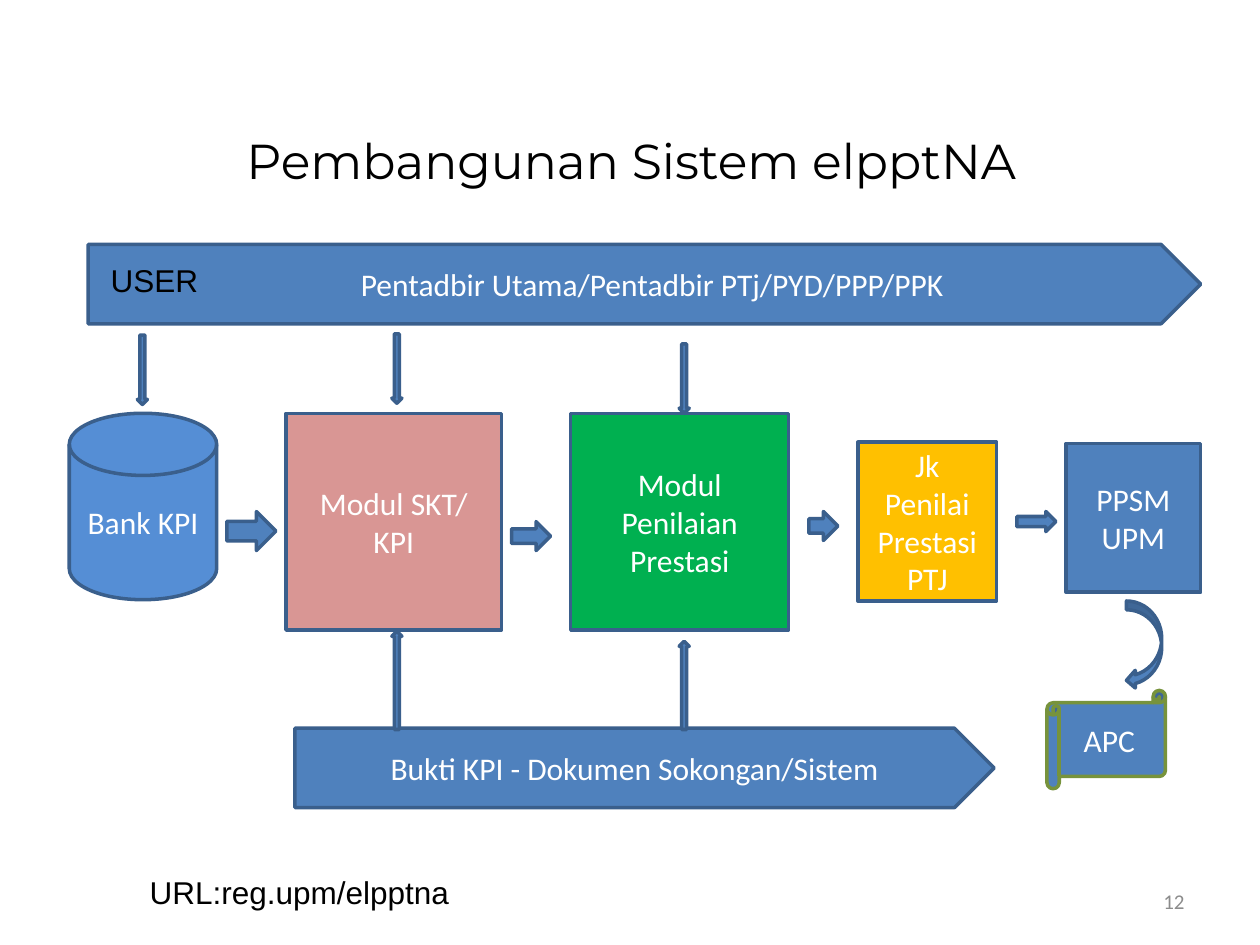
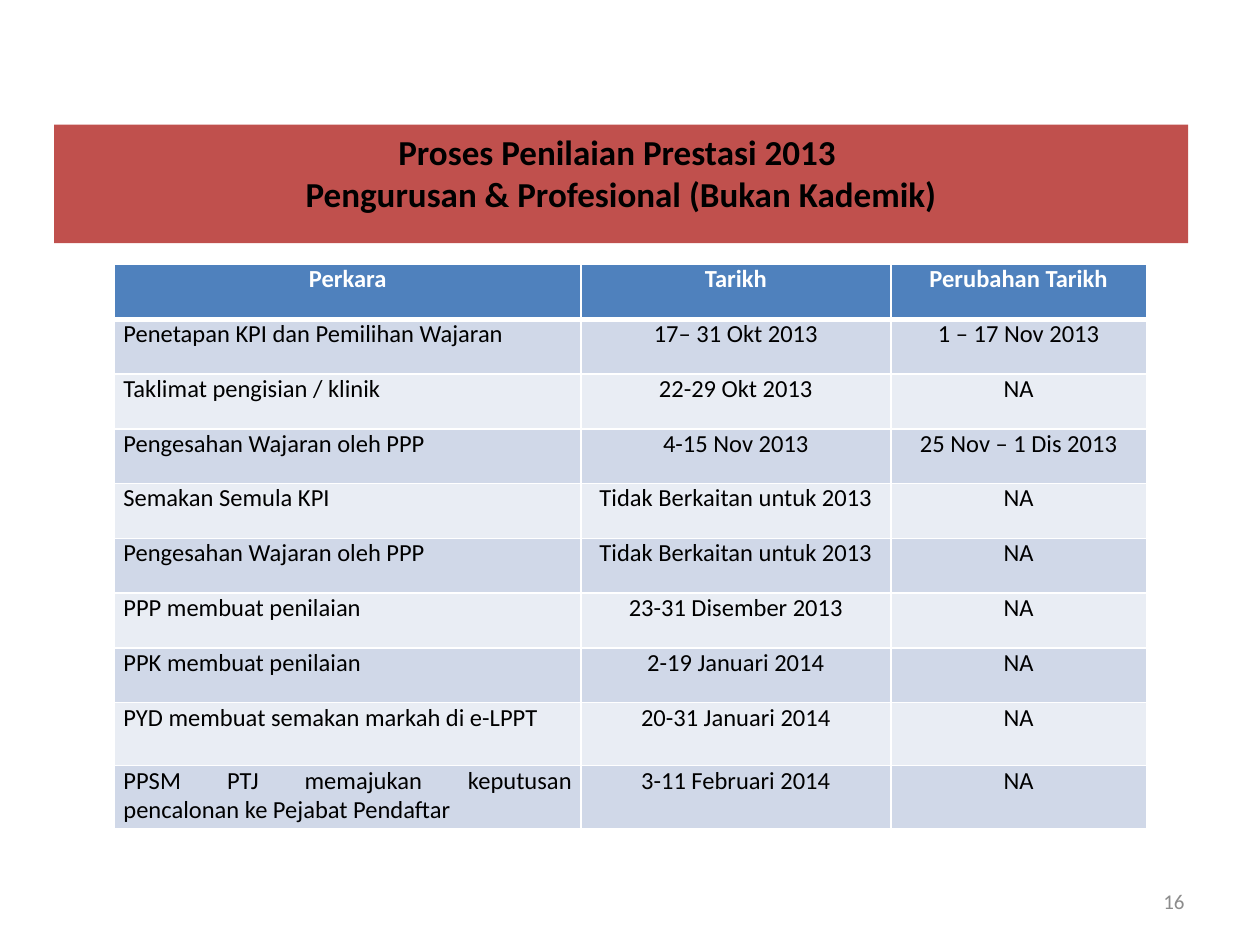
from lxml import etree
from pptx import Presentation
from pptx import util as u
from pptx.dml.color import RGBColor
from pptx.enum import shapes, text
from pptx.oxml import ns

# Shared look
WHITE, BLACK = RGBColor(255, 255, 255), RGBColor(0, 0, 0)
GREY = RGBColor(0x8C, 0x8C, 0x8C)
BLUE, DARK_BLUE = RGBColor(0x4F, 0x81, 0xBD), RGBColor(0x3A, 0x5F, 0x8C)
SKY, PINK = RGBColor(0x55, 0x8E, 0xD5), RGBColor(0xD9, 0x96, 0x94)
GREEN, AMBER = RGBColor(0x00, 0xB0, 0x50), RGBColor(0xFF, 0xC0, 0x00)
OLIVE, RED = RGBColor(0x77, 0x93, 0x3C), RGBColor(0xC0, 0x50, 0x4D)
BAND_DARK, BAND_LIGHT = RGBColor(0xD0, 0xD8, 0xE8), RGBColor(0xE9, 0xED, 0xF4)

KIND = shapes.MSO_SHAPE
LEFT, CENTER = text.PP_ALIGN.LEFT, text.PP_ALIGN.CENTER
RIGHT, JUSTIFY = text.PP_ALIGN.RIGHT, text.PP_ALIGN.JUSTIFY
TOP, MIDDLE = text.MSO_ANCHOR.TOP, text.MSO_ANCHOR.MIDDLE
TITLE_TOP, TITLE_WIDTH = 0.99, 9

# Slide 1 content: kind, label, fill, outline, (left, top, width, height)
STAGES = [
    (KIND.FLOWCHART_MAGNETIC_DISK, "Bank KPI", SKY, DARK_BLUE, (0.55, 3.28, 1.17, 1.48)),
    (KIND.RECTANGLE, "Modul SKT/ KPI", PINK, DARK_BLUE, (2.27, 3.28, 1.71, 1.72)),
    (KIND.RECTANGLE, "Modul Penilaian Prestasi", GREEN, DARK_BLUE, (4.53, 3.28, 1.73, 1.72)),
    (KIND.FLOWCHART_PROCESS, "Jk Penilai Prestasi PTJ", AMBER, DARK_BLUE, (6.81, 3.51, 1.1, 1.26)),
    (KIND.FLOWCHART_PROCESS, "PPSM UPM", BLUE, DARK_BLUE, (8.46, 3.52, 1.07, 1.18)),
    (KIND.HORIZONTAL_SCROLL, "APC", BLUE, OLIVE, (8.31, 5.48, 0.94, 0.78)),
]
USERS = ("Pentadbir Utama/Pentadbir PTj/PYD/PPP/PPK", (0.7, 1.94, 8.83, 0.63))
EVIDENCE = ("Bukti KPI - Dokumen Sokongan/Sistem", (2.34, 5.78, 5.55, 0.63))

# Thin vertical arrows: kind, left, top, height
THIN = 0.08
VERTICAL_ARROWS = [
    (KIND.DOWN_ARROW, 1.09, 2.66, 0.55),
    (KIND.DOWN_ARROW, 3.11, 2.65, 0.55),
    (KIND.DOWN_ARROW, 5.39, 2.73, 0.55),
    (KIND.UP_ARROW, 3.11, 5.01, 0.78),
    (KIND.UP_ARROW, 5.39, 5.09, 0.7),
]
STEP_ARROWS = [
    (1.8, 4.06, 0.39, 0.31), (4.06, 4.14, 0.31, 0.23),
    (6.42, 4.06, 0.23, 0.23), (8.07, 4.06, 0.31, 0.16),
]
AWARD_ARROW = (8.94, 4.77, 0.28, 0.7)

# Slide 2 content
SCHEDULE_TITLE = "Proses Penilaian Prestasi 2013 \vPengurusan & Profesional (Bukan Kademik)"
SCHEDULE = [
    ("Perkara", "Tarikh", "Perubahan Tarikh"),
    ("Penetapan KPI dan Pemilihan Wajaran", "17– 31 Okt 2013", "1 – 17 Nov 2013"),
    ("Taklimat pengisian / klinik", "22-29 Okt 2013", "NA"),
    ("Pengesahan Wajaran oleh PPP", "4-15 Nov 2013", "25 Nov – 1 Dis 2013"),
    ("Semakan Semula KPI", "Tidak Berkaitan untuk 2013", "NA"),
    ("Pengesahan Wajaran oleh PPP", "Tidak Berkaitan untuk 2013", "NA"),
    ("PPP membuat penilaian", "23-31 Disember 2013", "NA"),
    ("PPK membuat penilaian", "2-19 Januari 2014", "NA"),
    ("PYD membuat semakan markah di e-LPPT", "20-31 Januari 2014", "NA"),
    ("PPSM PTJ memajukan keputusan pencalonan ke Pejabat Pendaftar",
     "3-11 Februari 2014", "NA"),
]
COLUMN_WIDTHS = [3.7, 2.46, 2.03]
ROW_HEIGHTS = [0.435] * 8 + [0.5] * 2


def inches(box):
    return [u.Inches(length) for length in box]


def write(frame, words, size, color, align, anchor=TOP, font="Calibri", bold=False):
    frame.word_wrap = True
    frame.vertical_anchor = anchor
    paragraph = frame.paragraphs[0]
    paragraph.text = words
    paragraph.alignment = align
    style = paragraph.font
    style.name, style.size, style.bold = font, u.Pt(size), bold
    style.color.rgb = color


def add_text(slide, box, words, size, color, align, **options):
    frame = slide.shapes.add_textbox(*inches(box)).text_frame
    write(frame, words, size, color, align, **options)
    return frame


def add_figure(slide, kind, box, label="", fill=BLUE, outline=DARK_BLUE):
    figure = slide.shapes.add_shape(kind, *inches(box))
    figure.shadow.inherit = False
    figure.fill.solid()
    figure.fill.fore_color.rgb = fill
    if outline is None:
        figure.line.fill.background()
    else:
        figure.line.color.rgb = outline
        figure.line.width = u.Pt(2)
    if label:
        write(figure.text_frame, label, 18, WHITE, CENTER, MIDDLE)
    return figure


def new_slide(deck, number):
    slide = deck.slides.add_slide(deck.slide_layouts[6])
    add_text(slide, (7.17, 6.95, 2.33, 0.4), str(number), 12, GREY, RIGHT, anchor=MIDDLE)
    return slide


def set_borders(cell, top, bottom):
    """White cell edges; widths in points. Edges go before the cell fill."""
    properties = cell._tc.get_or_add_tcPr()
    widths = {"L": 1, "R": 1, "T": top, "B": bottom}
    for place, (side, width) in enumerate(widths.items()):
        edge = etree.Element(ns.qn(f"a:ln{side}"), w=str(u.Pt(width)))
        fill = etree.SubElement(edge, ns.qn("a:solidFill"))
        etree.SubElement(fill, ns.qn("a:srgbClr"), val=str(WHITE))
        properties.insert(place, edge)


def build_system(deck):
    slide = new_slide(deck, 12)
    add_text(slide, (0.51, TITLE_TOP, TITLE_WIDTH, 0.87), "Pembangunan Sistem elpptNA",
             28, BLACK, CENTER, font="Montserrat")

    # Stages and the two long bands
    for kind, label, fill, outline, box in STAGES:
        add_figure(slide, kind, box, label, fill, outline)
    users, evidence = [add_figure(slide, KIND.PENTAGON, box, label)
                       for label, box in (USERS, EVIDENCE)]
    users.text_frame.margin_left = u.Inches(0.38)

    # Arrows
    for kind, left, top, height in VERTICAL_ARROWS:
        add_figure(slide, kind, (left, top, THIN, height))
    for box in STEP_ARROWS:
        add_figure(slide, KIND.RIGHT_ARROW, box)
    add_figure(slide, KIND.CURVED_LEFT_ARROW, AWARD_ARROW)

    # Free labels
    add_text(slide, (0.78, 2.02, 1.09, 0.4), "USER", 18, BLACK, LEFT, font="Arial")
    address = add_text(slide, (1.09, 6.88, 2.67, 0.4), "URL:reg.upm/elpptna",
                       18, BLACK, LEFT, font="Arial")
    address.word_wrap = False


def build_schedule(deck):
    slide = new_slide(deck, 16)
    banner = add_figure(slide, KIND.RECTANGLE, (0.43, TITLE_TOP, TITLE_WIDTH, 0.94),
                        fill=RED, outline=None)
    write(banner.text_frame, SCHEDULE_TITLE, 20, BLACK, CENTER, bold=True)

    box = (0.91, 2.1, sum(COLUMN_WIDTHS), sum(ROW_HEIGHTS))
    table = slide.shapes.add_table(len(SCHEDULE), len(COLUMN_WIDTHS), *inches(box)).table
    for column, width in zip(table.columns, COLUMN_WIDTHS):
        column.width = u.Inches(width)
    for row, height in zip(table.rows, ROW_HEIGHTS):
        row.height = u.Inches(height)

    for r, entries in enumerate(SCHEDULE):
        header = r == 0
        fill = BLUE if header else BAND_DARK if r % 2 else BAND_LIGHT
        for c, entry in enumerate(entries):
            cell = table.cell(r, c)
            cell.margin_left = cell.margin_right = u.Inches(0.07)
            cell.margin_top = cell.margin_bottom = 0
            cell.fill.solid()
            cell.fill.fore_color.rgb = fill
            write(cell.text_frame, entry, 14, WHITE if header else BLACK,
                  CENTER if header or c else JUSTIFY, bold=header)
            cell.text_frame.paragraphs[0].space_after = u.Pt(3)
            set_borders(cell, top=3 if r == 1 else 1, bottom=3 if header else 1)


def main():
    deck = Presentation()
    deck.slide_width, deck.slide_height = inches((10, 7.5))
    build_system(deck)
    build_schedule(deck)
    deck.save("out.pptx")


if __name__ == "__main__":
    main()
